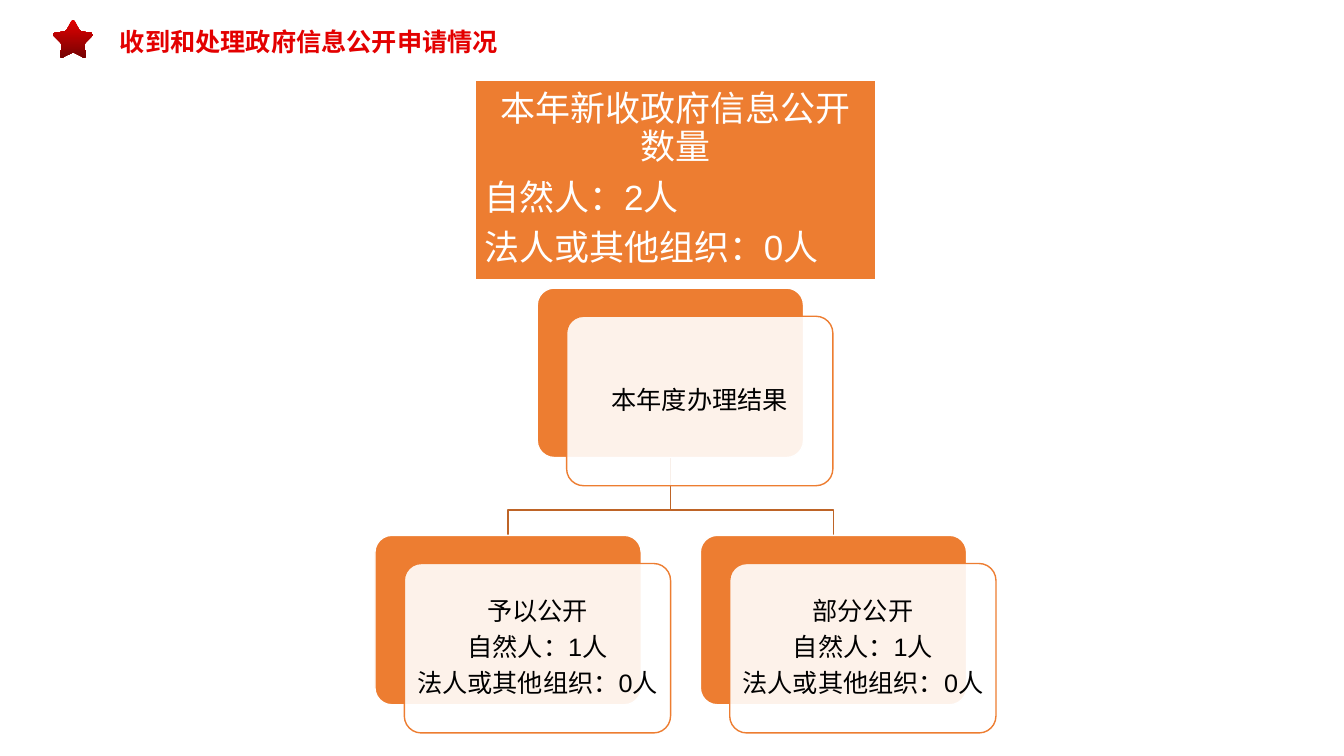
from math import cos, radians, sin

from lxml.etree import SubElement
from pptx import Presentation
from pptx.dml.color import RGBColor
from pptx.enum.shapes import MSO_SHAPE as SHAPE
from pptx.enum.text import MSO_ANCHOR as ANCHOR, MSO_AUTO_SIZE as AUTO, PP_ALIGN as ALIGN
from pptx.oxml.ns import qn
from pptx.util import Cm, Pt

ORANGE, WHITE, BLACK, BROWN = "ED7D31", "FFFFFF", "000000", "BE6427"
RED, DARK_RED = "E30000", "760303"
CARD_W, CARD_H = 6.71, 4.27
SHIFT_X, SHIFT_Y = 0.74, 0.71


def color(value):
    return RGBColor.from_string(value)


def add_box(slide, kind, x, y, w, h, fill, line, weight=1.0):
    s = slide.shapes.add_shape(kind, Cm(x), Cm(y), Cm(w), Cm(h))
    s.shadow.inherit = False
    s.fill.solid()
    s.fill.fore_color.rgb = color(fill)
    s.line.color.rgb = color(line)
    s.line.width = Pt(weight)
    return s


def write(s, lines, size, text_color, inset, gap, aligns):
    tf = s.text_frame
    tf.word_wrap = True
    tf.vertical_anchor = ANCHOR.MIDDLE
    tf.margin_left = tf.margin_right = tf.margin_top = tf.margin_bottom = Cm(inset)
    for i, (line, align) in enumerate(zip(lines, aligns)):
        p = tf.paragraphs[0] if i == 0 else tf.add_paragraph()
        p.text = line
        p.alignment = align
        p.line_spacing = 0.9
        p.space_after = Pt(gap)
        p.font.size = Pt(size)
        p.font.name = "Arial"
        p.font.color.rgb = color(text_color)


def add_card(slide, x, y, lines):
    """Orange card with a translucent text card shifted over it."""
    back = add_box(slide, SHAPE.ROUNDED_RECTANGLE, x, y, CARD_W, CARD_H, ORANGE, WHITE)
    front = add_box(slide, SHAPE.ROUNDED_RECTANGLE, x + SHIFT_X, y + SHIFT_Y,
                    CARD_W, CARD_H, WHITE, ORANGE)
    for s in (back, front):
        s.adjustments[0] = 0.1
    solid = front.fill.fore_color._xFill
    SubElement(solid.find(qn("a:srgbClr")), qn("a:alpha"), val="90000")
    write(front, lines, 18, BLACK, 0.18, 6, [ALIGN.CENTER] * len(lines))


def add_outline(slide, points, close):
    pts = [(Cm(x), Cm(y)) for x, y in points]
    builder = slide.shapes.build_freeform(*pts[0])
    builder.add_line_segments(pts[1:], close=close)
    s = builder.convert_to_shape()
    s.shadow.inherit = False
    return s


def add_branch(slide, x1, y1, x2, y2):
    bend = y2 - 0.64
    s = add_outline(slide, [(x1, y1), (x1, bend), (x2, bend), (x2, y2)], False)
    s.fill.background()
    s.line.color.rgb = color(BROWN)
    s.line.width = Pt(1)


def add_star(slide, cx, cy, radius):
    # One blunt arm as (angle, share of radius), turned five times
    arm = [(-8, 0.87), (-3, 1), (3, 1), (8, 0.87), (30, 0.6), (42, 0.6)]
    polar = [(radians(72 * k + a), radius * r) for k in range(5) for a, r in arm]
    s = add_outline(slide, [(cx + r * sin(a), cy - r * cos(a)) for a, r in polar], True)
    s.fill.gradient()
    s.fill.gradient_angle = 270
    for stop, value, place in zip(s.fill.gradient_stops, (RED, DARK_RED), (0, 1)):
        stop.color.rgb = color(value)
        stop.position = place
    s.line.fill.background()


def set_title(slide, text):
    title = slide.shapes.title
    title.left, title.top, title.width, title.height = Cm(2.69), Cm(0.53), Cm(10.19), Cm(1.02)
    tf = title.text_frame
    tf.text = text
    tf.word_wrap = False
    tf.auto_size = AUTO.NONE
    tf.vertical_anchor = ANCHOR.MIDDLE
    p = tf.paragraphs[0]
    p.alignment = ALIGN.CENTER
    p.font.size = Pt(18)
    p.font.bold = True
    p.font.name = "Arial"
    p.font.color.rgb = color(RED)


def main():
    prs = Presentation()
    prs.slide_width, prs.slide_height = Cm(33.87), Cm(19.05)
    slide = prs.slides.add_slide(prs.slide_layouts[5])

    # Heading
    set_title(slide, "收到和处理政府信息公开申请情况")
    add_star(slide, 1.84, 1.02, 0.52)

    # Number of new requests
    s = add_box(slide, SHAPE.RECTANGLE, 11.96, 2.01, 10.13, 5.05, ORANGE, WHITE, 1.5)
    write(s, ["本年新收政府信息公开数量", "自然人：2人", "法人或其他组织：0人"],
          25, WHITE, 0.25, 9, [ALIGN.CENTER, ALIGN.LEFT, ALIGN.LEFT])

    # Results: branches first, cards over them
    root_x, root_y, result_y = 13.54, 7.26, 13.49
    people = ["自然人：1人", "法人或其他组织：0人"]
    results = [(9.45, "予以公开"), (17.65, "部分公开")]
    for x, _ in results:
        add_branch(slide, root_x + CARD_W / 2, root_y + CARD_H, x + CARD_W / 2, result_y)
    add_card(slide, root_x, root_y, ["本年度办理结果"])
    for x, name in results:
        add_card(slide, x, result_y, [name] + people)

    prs.save("out.pptx")


if __name__ == "__main__":
    main()
